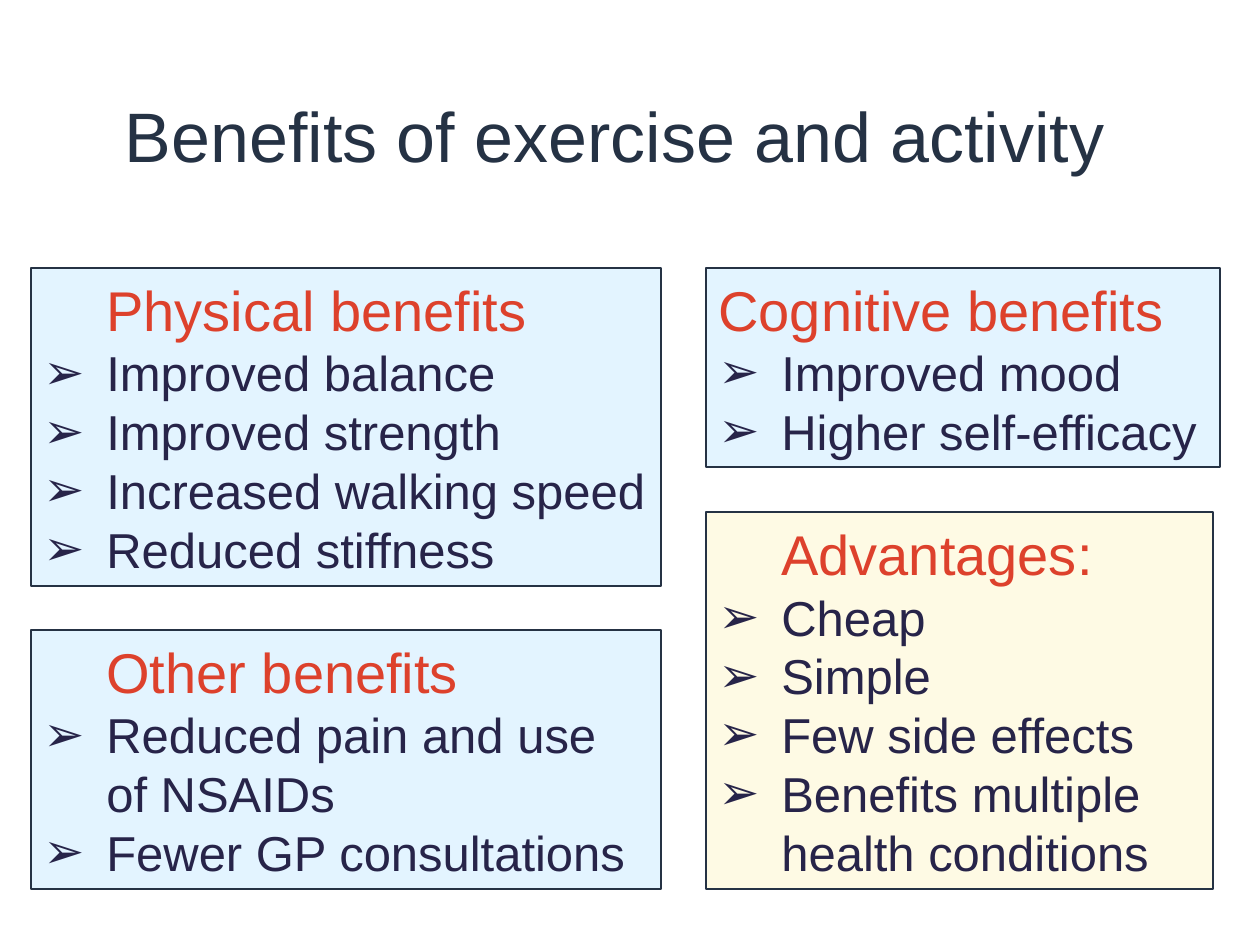
from lxml import etree
from pptx import Presentation
from pptx.dml.color import RGBColor
from pptx.enum.shapes import MSO_SHAPE
from pptx.enum.text import MSO_ANCHOR, PP_ALIGN
from pptx.oxml.ns import qn
from pptx.util import Pt

RECTANGLE = MSO_SHAPE.RECTANGLE
MIDDLE = MSO_ANCHOR.MIDDLE
LEFT, CENTER = PP_ALIGN.LEFT, PP_ALIGN.CENTER

SLATE = RGBColor(0x25, 0x32, 0x44)
RED = RGBColor(0xDD, 0x41, 0x2C)
NAVY = RGBColor(0x27, 0x24, 0x49)
PALE_BLUE = RGBColor(0xE3, 0xF4, 0xFF)
CREAM = RGBColor(0xFE, 0xFA, 0xE4)

FONT = "Arial"
BULLET = "➢"
PX_PER_INCH = 126
INDENT = 63
LEFT_COLUMN, RIGHT_COLUMN = 31, 706
TOP_ROW = 268

TITLE = "Benefits of exercise and activity"
PANELS = [
    ("Physical benefits", INDENT, PALE_BLUE, (LEFT_COLUMN, TOP_ROW, 630, 318),
     ["Improved balance", "Improved strength", "Increased walking speed",
      "Reduced stiffness"]),
    ("Cognitive benefits", 0, PALE_BLUE, (RIGHT_COLUMN, TOP_ROW, 514, 199),
     ["Improved mood", "Higher self-efficacy"]),
    ("Other benefits", INDENT, PALE_BLUE, (LEFT_COLUMN, 630, 630, 259),
     ["Reduced pain and use of NSAIDs", "Fewer GP consultations"]),
    ("Advantages:", INDENT, CREAM, (RIGHT_COLUMN, 512, 507, 377),
     ["Cheap", "Simple", "Few side effects",
      "Benefits multiple health conditions"]),
]


def px(length):
    return round(length * 914400 / PX_PER_INCH)


def style(paragraph, size, color, align=LEFT):
    paragraph.alignment = align
    for run in paragraph.runs:
        run.font.name = FONT
        run.font.size = Pt(size)
        run.font.color.rgb = color


def indent(paragraph, margin, first_line=0):
    properties = paragraph._p.get_or_add_pPr()
    properties.set("marL", str(px(margin)))
    properties.set("indent", str(px(first_line)))
    return properties


def add_panel(slide, heading, heading_margin, fill, bounds, benefits):
    panel = slide.shapes.add_shape(RECTANGLE, *map(px, bounds))
    panel.shadow.inherit = False
    panel.fill.solid()
    panel.fill.fore_color.rgb = fill
    panel.line.color.rgb = SLATE
    panel.line.width = Pt(1)

    frame = panel.text_frame
    frame.word_wrap = True
    frame.vertical_anchor = MIDDLE
    frame.text = "\n".join([heading] + benefits)
    heading_line, *benefit_lines = frame.paragraphs
    indent(heading_line, heading_margin)
    style(heading_line, 32, RED)
    for line in benefit_lines:
        properties = indent(line, INDENT, -INDENT)
        etree.SubElement(properties, qn("a:buFont")).set("typeface", FONT)
        etree.SubElement(properties, qn("a:buChar")).set("char", BULLET)
        style(line, 28, NAVY)


def main():
    deck = Presentation()
    deck.slide_width, deck.slide_height = px(1260), px(945)
    slide = deck.slides.add_slide(deck.slide_layouts[6])

    title = slide.shapes.add_textbox(px(88), px(86), px(1053), px(97)).text_frame
    title.word_wrap = True
    title.vertical_anchor = MIDDLE
    title.text = TITLE
    style(title.paragraphs[0], 40, SLATE, CENTER)

    for panel in PANELS:
        add_panel(slide, *panel)
    deck.save("out.pptx")


if __name__ == "__main__":
    main()
